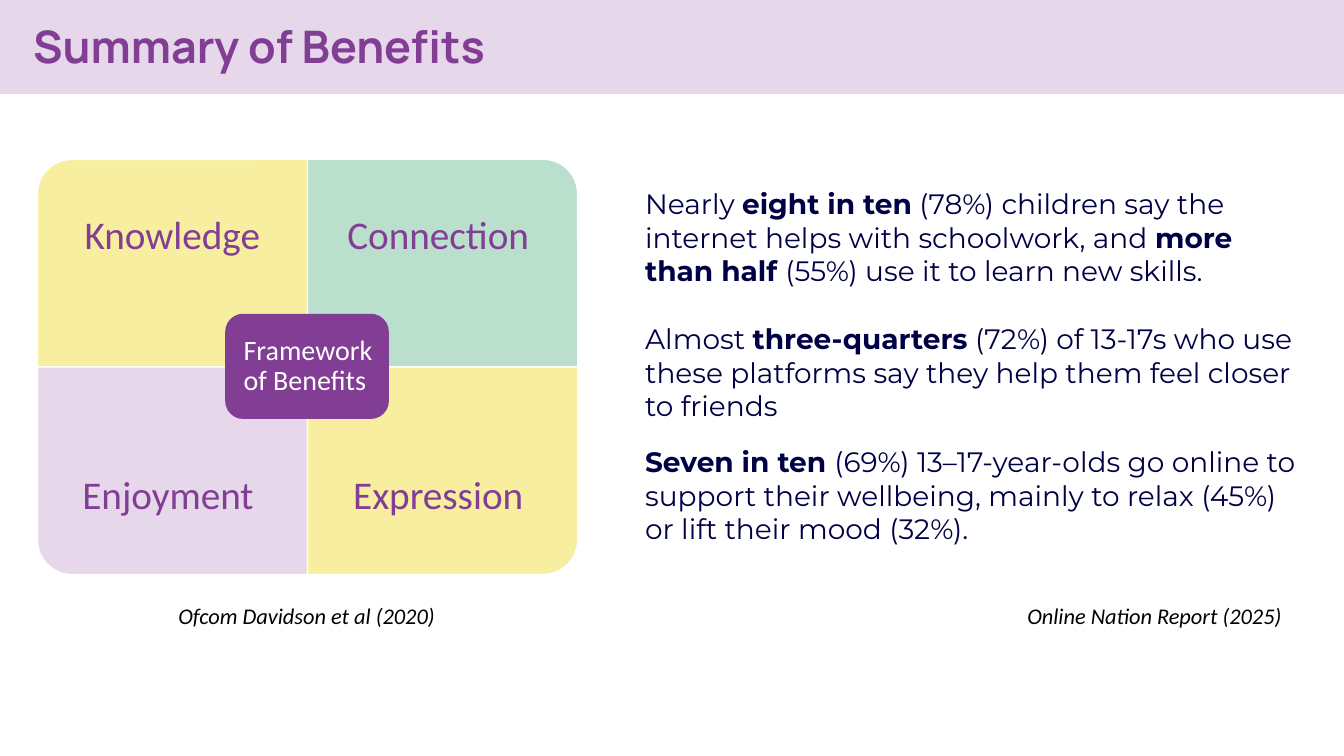
from pptx import Presentation
from pptx.dml.color import RGBColor
from pptx.enum.shapes import MSO_SHAPE
from pptx.enum.text import MSO_ANCHOR, MSO_AUTO_SIZE, PP_ALIGN
from pptx.util import Pt

RECTANGLE = MSO_SHAPE.RECTANGLE
ROUNDED = MSO_SHAPE.ROUNDED_RECTANGLE
ONE_ROUND_CORNER = MSO_SHAPE.ROUND_1_RECTANGLE
MIDDLE = MSO_ANCHOR.MIDDLE
GROW = MSO_AUTO_SIZE.SHAPE_TO_FIT_TEXT
CENTER = PP_ALIGN.CENTER

PX = 9144
THEME = {
    "purple": "823D94", "lilac": "E6D8EA", "yellow": "F7EEA0",
    "green": "BADFCD", "navy": "000045", "white": "FFFFFF", "black": "000000",
    "heading_font": "Manrope", "body_font": "Montserrat", "label_font": "Calibri",
    "title_size": 32, "label_size": 28, "body_size": 20, "source_size": 16,
}


def add_block(shapes, kind, box, fill, line):
    shape = shapes.add_shape(kind, *[value * PX for value in box])
    shape.shadow.inherit = False
    shape.fill.solid()
    shape.fill.fore_color.rgb = RGBColor.from_string(THEME[fill])
    shape.line.color.rgb = RGBColor.from_string(THEME[line])
    shape.line.width = Pt(1)
    return shape


def add_text(shapes, box, runs, font, size, color, inset=None):
    frame = shapes.add_textbox(*[value * PX for value in box]).text_frame
    frame.word_wrap = True
    paragraph = frame.paragraphs[0]
    for text, bold in runs:
        run = paragraph.add_run()
        run.text = text
        run.font.bold = bold
    paragraph.font.name = THEME[font]
    paragraph.font.size = Pt(THEME[size])
    paragraph.font.color.rgb = RGBColor.from_string(THEME[color])
    if inset is None:
        frame.auto_size = GROW
    else:
        frame.vertical_anchor = MIDDLE
        frame.margin_left = frame.margin_right = inset * PX
        frame.margin_top = frame.margin_bottom = inset * PX
        paragraph.alignment = CENTER
        paragraph.line_spacing = 0.9
    return paragraph


presentation = Presentation()
presentation.slide_width = 1333 * PX
presentation.slide_height = 750 * PX
slide = presentation.slides.add_slide(presentation.slide_layouts[6])

add_block(slide.shapes, RECTANGLE, (0, 0, 1333, 93), "lilac", "lilac")
add_text(slide.shapes, (23, 14, 667, 64), [("Summary of Benefits", True)],
         "heading_font", "title_size", "purple")

framework = slide.shapes.add_group_shape().shapes
GRID_LEFT, GRID_TOP, CELL_WIDTH, CELL_HEIGHT = 37, 158, 268, 206
LABEL_HEIGHT = 154
quadrants = [
    ("Knowledge", 0, 0, 270, "yellow"),
    ("Connection ", 1, 0, 0, "green"),
    ("Enjoyment ", 0, 1, 180, "lilac"),
    ("Expression ", 1, 1, 90, "yellow"),
]
for label, column, row, rotation, fill in quadrants:
    left = GRID_LEFT + column * CELL_WIDTH
    top = GRID_TOP + row * CELL_HEIGHT
    turn = (CELL_WIDTH - CELL_HEIGHT) // 2 if rotation % 180 else 0
    box = (left + turn, top - turn, CELL_WIDTH - 2 * turn, CELL_HEIGHT + 2 * turn)
    quadrant = add_block(framework, ONE_ROUND_CORNER, box, fill, "white")
    quadrant.rotation = rotation
    label_top = top + row * (CELL_HEIGHT - LABEL_HEIGHT)
    add_text(framework, (left, label_top, CELL_WIDTH, LABEL_HEIGHT),
             [(label, False)], "label_font", "label_size", "purple", 22)

add_block(framework, ROUNDED, (224, 312, 161, 103), "purple", "purple")
add_text(framework, (230, 317, 151, 93), [("Framework of Benefits ", False)],
         "label_font", "body_size", "white", 8)

findings = [
    (180, 667, [
        ("Nearly ", False), ("eight in ten", True),
        (" (78%) children say the internet helps with schoolwork, and ", False),
        ("more than half ", True), ("(55%) use it to learn new skills.", False)]),
    (314, 679, [
        ("Almost ", False), ("three-quarters", True),
        (" (72%) of 13-17s who use these platforms say they help them "
         "feel closer to friends", False)]),
    (436, 667, [
        ("Seven in ten ", True),
        ("(69%) 13–17-year-olds go online to support their wellbeing, "
         "mainly to relax (45%) or lift their mood (32%).", False)]),
]
for top, width, runs in findings:
    add_text(slide.shapes, (630, top, width, 111), runs,
             "body_font", "body_size", "navy")

sources = [(167, "Ofcom Davidson et al (2020)"), (1009, "Online Nation Report (2025)")]
for left, citation in sources:
    paragraph = add_text(slide.shapes, (left, 592, 379, 37), [(citation, False)],
                         "label_font", "source_size", "black")
    paragraph.font.italic = True

presentation.save("out.pptx")
